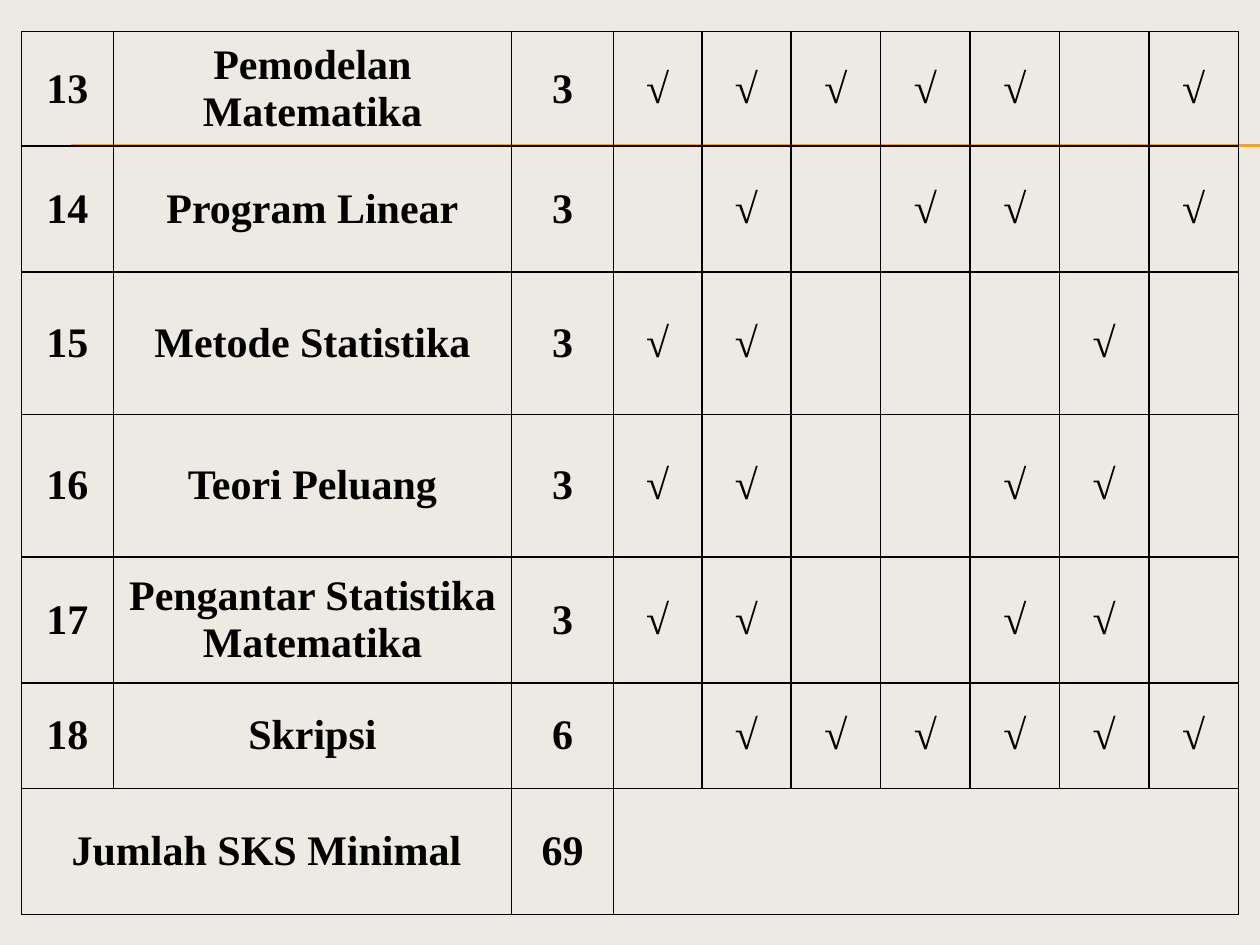
from dataclasses import dataclass

from lxml.etree import SubElement
from pptx import Presentation
from pptx.dml.color import RGBColor
from pptx.enum.shapes import MSO_CONNECTOR
from pptx.enum.text import MSO_ANCHOR, PP_ALIGN
from pptx.oxml.ns import qn
from pptx.slide import Slide
from pptx.table import Table, _Cell as Cell
from pptx.util import Inches, Pt

PAPER, INK, ORANGE = "ECEAE3", "000000", "F0A22E"
FONT = "Times New Roman"
CHECK = "√"
COLUMN_WIDTHS = [0.73, 3.16, 0.81, 0.7] + [0.71] * 6
FIRST_CHECK_COLUMN = 3
TOTAL_HEIGHT = 1


@dataclass
class Course:
    number: int
    title: str
    credits: int
    checks: tuple[int, ...]  # checked columns, counted from 1
    height: float


COURSES = [
    Course(13, "Pemodelan Matematika", 3, (1, 2, 3, 4, 5, 7), 0.91),
    Course(14, "Program Linear", 3, (2, 4, 5, 7), 1),
    Course(15, "Metode Statistika", 3, (1, 2, 6), 1.13),
    Course(16, "Teori Peluang", 3, (1, 2, 5, 6), 1.13),
    Course(17, "Pengantar Statistika Matematika", 3, (1, 2, 5, 6), 1),
    Course(18, "Skripsi", 6, (2, 3, 4, 5, 6, 7), 0.84),
]


def color(value: str) -> RGBColor:
    return RGBColor.from_string(value)


def draw_rule(slide: Slide, y: float) -> None:
    rule = slide.shapes.add_connector(
        MSO_CONNECTOR.STRAIGHT, Inches(0.56), Inches(y), Inches(10), Inches(y))
    rule.line.color.rgb = color(ORANGE)
    rule.line.width = Pt(0.75)
    SubElement(rule._element.spPr, qn("a:effectLst"))


def format_cell(cell: Cell) -> None:
    """Give the cell thin black borders, no fill and narrow margins."""
    properties = cell._tc.get_or_add_tcPr()
    for side in ("a:lnL", "a:lnR", "a:lnT", "a:lnB"):
        border = SubElement(properties, qn(side), w=str(Pt(1)))
        fill = SubElement(border, qn("a:solidFill"))
        SubElement(fill, qn("a:srgbClr"), val=INK)
    cell.fill.background()
    cell.vertical_anchor = MSO_ANCHOR.MIDDLE
    cell.margin_left = cell.margin_right = Inches(0.07)
    cell.margin_top = cell.margin_bottom = 0


def write(cell: Cell, text: str) -> None:
    paragraph = cell.text_frame.paragraphs[0]
    paragraph.alignment = PP_ALIGN.CENTER
    run = paragraph.add_run()
    run.text = text
    run.font.name = FONT
    run.font.size = Pt(24)
    run.font.bold = True
    run.font.color.rgb = color(INK)


def fill_course(table: Table, row: int, course: Course) -> None:
    for column, value in enumerate((course.number, course.title, course.credits)):
        write(table.cell(row, column), str(value))
    for check in course.checks:
        write(table.cell(row, FIRST_CHECK_COLUMN + check - 1), CHECK)


def draw_curriculum(slide: Slide) -> None:
    heights = [course.height for course in COURSES] + [TOTAL_HEIGHT]
    table = slide.shapes.add_table(
        len(heights), len(COLUMN_WIDTHS), Inches(0.17), Inches(0.25),
        Inches(sum(COLUMN_WIDTHS)), Inches(sum(heights))).table
    table.first_row = table.horz_banding = False
    for column, width in zip(table.columns, COLUMN_WIDTHS):
        column.width = Inches(width)
    for row, height in zip(table.rows, heights):
        row.height = Inches(height)
    for cell in table.iter_cells():
        format_cell(cell)

    for row, course in enumerate(COURSES):
        fill_course(table, row, course)

    total = len(COURSES)
    table.cell(total, 0).merge(table.cell(total, 1))
    table.cell(total, FIRST_CHECK_COLUMN).merge(
        table.cell(total, len(COLUMN_WIDTHS) - 1))
    write(table.cell(total, 0), "Jumlah SKS Minimal")
    write(table.cell(total, 2), "69")


def main() -> None:
    deck = Presentation()
    deck.slide_width, deck.slide_height = Inches(10), Inches(7.5)
    slide = deck.slides.add_slide(deck.slide_layouts[6])
    slide.background.fill.solid()
    slide.background.fill.fore_color.rgb = color(PAPER)
    for y in (1.15, 1.16):
        draw_rule(slide, y)
    draw_curriculum(slide)
    deck.save("out.pptx")


if __name__ == "__main__":
    main()
